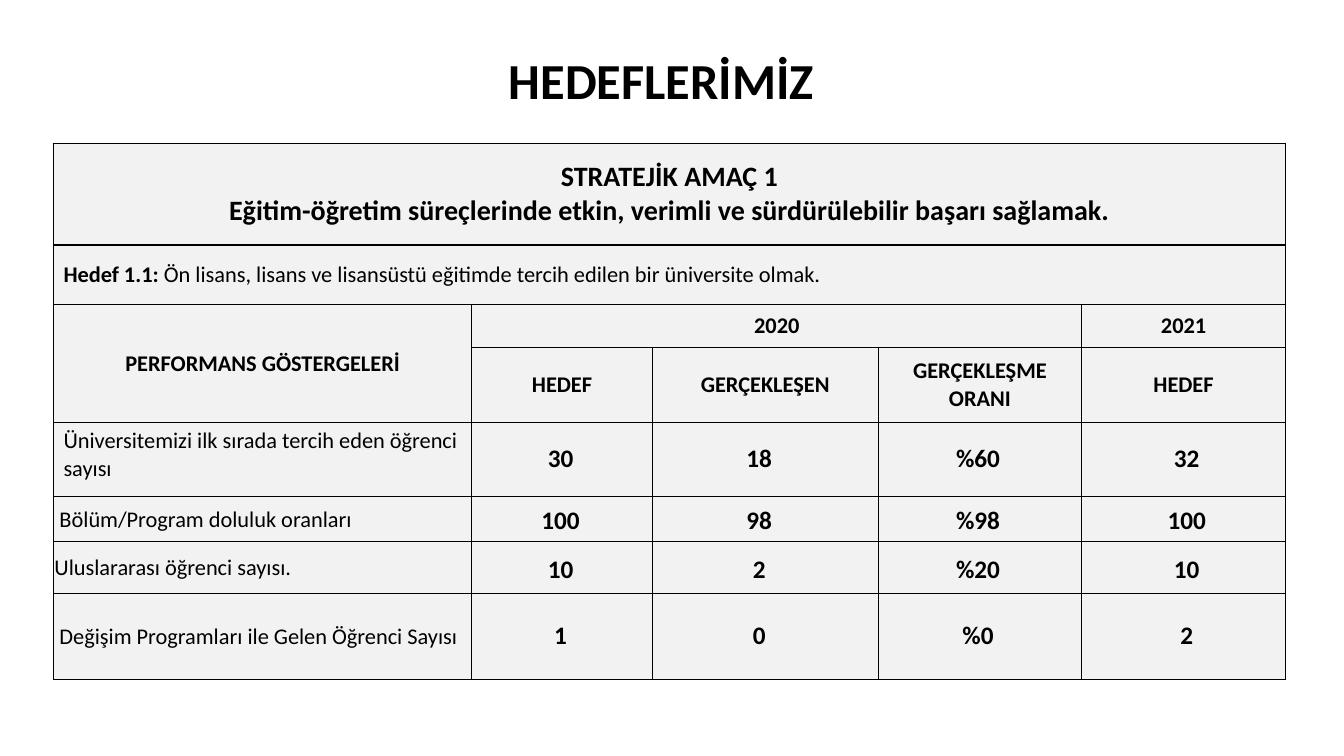
from lxml import etree
from pptx import Presentation
from pptx.dml.color import RGBColor
from pptx.enum.text import MSO_ANCHOR, MSO_AUTO_SIZE, PP_ALIGN
from pptx.oxml.ns import qn
from pptx.util import Inches, Pt

CENTER, LEFT = PP_ALIGN.CENTER, PP_ALIGN.LEFT
MIDDLE, TOP = MSO_ANCHOR.MIDDLE, MSO_ANCHOR.TOP
FONT = "Calibri"
COLORS = {"text": "000000", "border": "000000", "cell": "F2F2F2"}

TITLE = "HEDEFLERİMİZ"
GOAL = ["STRATEJİK AMAÇ 1",
        "Eğitim-öğretim süreçlerinde etkin, verimli ve sürdürülebilir başarı sağlamak."]
TARGET = ("Hedef 1.1: ",
          "Ön lisans, lisans ve lisansüstü eğitimde tercih edilen bir üniversite olmak.")
HEADERS = {  # (row, column): text
    (2, 0): "PERFORMANS GÖSTERGELERİ", (2, 1): "2020", (2, 4): "2021",
    (3, 1): "HEDEF", (3, 2): "GERÇEKLEŞEN",
    (3, 3): "GERÇEKLEŞME ORANI", (3, 4): "HEDEF",
}
MERGES = [((0, 0), (0, 4)), ((1, 0), (1, 4)), ((2, 0), (3, 0)), ((2, 1), (2, 3))]
FIRST_INDICATOR_ROW = 4
INDICATORS = [  # label, left margin, top of values, values
    ("Üniversitemizi ilk sırada tercih eden öğrenci sayısı", 0.1, 4.34,
     ["30", "18", "%60", "32"]),
    ("Bölüm/Program doluluk oranları", 0.06, 4.95, ["100", "98", "%98", "100"]),
    ("Uluslararası öğrenci sayısı.", 0.01, 5.44, ["10", "2", "%20", "10"]),
    ("Değişim Programları ile Gelen Öğrenci Sayısı", 0.06, 6.09, ["1", "0", "%0", "2"]),
]
COL_WIDTHS = [4.15, 1.79, 2.24, 2.02, 2.02]
ROW_HEIGHTS = [1.01, 0.59, 0.43, 0.74, 0.74, 0.44, 0.52, 0.85]
TABLE_LEFT, TABLE_TOP = 0.53, 1.42
VALUE_CENTERS = [5.56, 7.53, 9.7, 11.77]
VALUE_HEIGHT = 0.4


def add_run(p, text, size, bold=True):
    r = p.add_run()
    r.text = text
    r.font.name = FONT
    r.font.size = Pt(size)
    r.font.bold = bold
    r.font.color.rgb = RGBColor.from_string(COLORS["text"])


def write(tf, paragraphs, size, bold=True, align=CENTER):
    for i, text in enumerate(paragraphs):
        p = tf.add_paragraph() if i else tf.paragraphs[0]
        p.alignment = align
        add_run(p, text, size, bold)


def style_cell(cell):
    """Give a cell its fill and a thin line on all four sides."""
    cell.vertical_anchor = MIDDLE
    tc_pr = cell._tc.get_or_add_tcPr()
    for side in ("a:lnL", "a:lnR", "a:lnT", "a:lnB"):
        ln = etree.SubElement(tc_pr, qn(side), w=str(Pt(1)))
        fill = etree.SubElement(ln, qn("a:solidFill"))
        etree.SubElement(fill, qn("a:srgbClr"), val=COLORS["border"])
    cell.fill.solid()
    cell.fill.fore_color.rgb = RGBColor.from_string(COLORS["cell"])


def add_goal_table(slide):
    table = slide.shapes.add_table(
        len(ROW_HEIGHTS), len(COL_WIDTHS), Inches(TABLE_LEFT), Inches(TABLE_TOP),
        Inches(sum(COL_WIDTHS)), Inches(sum(ROW_HEIGHTS))).table
    for column, width in zip(table.columns, COL_WIDTHS):
        column.width = Inches(width)
    for row, height in zip(table.rows, ROW_HEIGHTS):
        row.height = Inches(height)
    for cell in table.iter_cells():
        style_cell(cell)
    for first, last in MERGES:
        table.cell(*first).merge(table.cell(*last))

    write(table.cell(0, 0).text_frame, GOAL, 20)
    p = table.cell(1, 0).text_frame.paragraphs[0]
    for text, bold in zip(TARGET, (True, False)):
        add_run(p, text, 16, bold)
    for position, text in HEADERS.items():
        write(table.cell(*position).text_frame, [text], 16)

    for i, (label, margin, _, _) in enumerate(INDICATORS):
        cell = table.cell(FIRST_INDICATOR_ROW + i, 0)
        write(cell.text_frame, [label], 16, False, LEFT)
        cell.margin_left = Inches(margin)
        if i == 0:
            cell.vertical_anchor = TOP
        else:
            cell.margin_top = cell.margin_right = Inches(0.01)
            cell.margin_bottom = 0


def add_value(slide, text, center, top):
    digits = len(text.strip("%"))
    width = 0.2 + 0.13 * digits + (0.18 if "%" in text else 0)
    box = slide.shapes.add_textbox(Inches(center - width / 2), Inches(top),
                                   Inches(width), Inches(VALUE_HEIGHT))
    tf = box.text_frame
    tf.word_wrap = False
    tf.auto_size = MSO_AUTO_SIZE.SHAPE_TO_FIT_TEXT
    write(tf, [text], 18)


def main():
    prs = Presentation()
    prs.slide_width, prs.slide_height = Inches(13.33), Inches(7.5)
    slide = prs.slides.add_slide(prs.slide_layouts[5])

    title = slide.shapes.title
    title.left, title.top = Inches(0.81), Inches(0.3)
    title.width, title.height = Inches(11.5), Inches(0.98)
    title.text_frame.vertical_anchor = MIDDLE
    write(title.text_frame, [TITLE], 36)

    add_goal_table(slide)
    for _, _, top, values in INDICATORS:
        for text, center in zip(values, VALUE_CENTERS):
            add_value(slide, text, center, top)
    prs.save("out.pptx")


if __name__ == "__main__":
    main()
